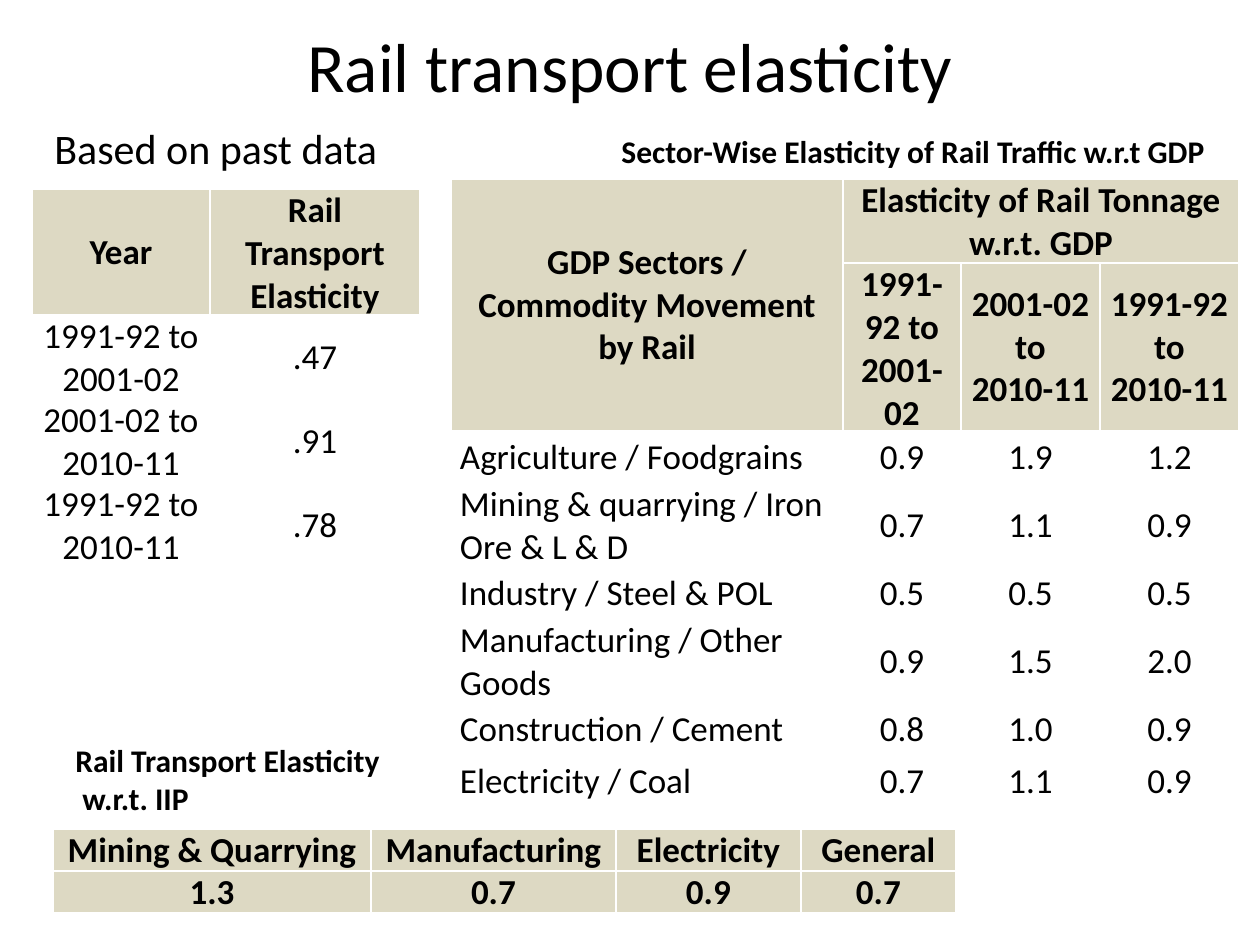
from lxml.etree import SubElement
from pptx import Presentation
from pptx.dml.color import RGBColor
from pptx.enum.text import MSO_ANCHOR, MSO_AUTO_SIZE, PP_ALIGN
from pptx.oxml.ns import qn
from pptx.util import Emu, Pt

COLORS = {"text": "000000", "header": "DDD9C3", "border": "FFFFFF"}
FONT = "Calibri"

PERIODS = ["1991-92 to\n2001-02", "2001-02 to\n2010-11", "1991-92 to\n2010-11"]

PAST_DATA = [
    ["Year", "Rail Transport Elasticity"],
    ["1991-92 to 2001-02", ".47"],
    ["2001-02 to 2010-11", ".91"],
    ["1991-92 to 2010-11", ".78"],
]
SECTORS = [
    ["GDP Sectors / Commodity Movement by Rail",
     "Elasticity of Rail Tonnage w.r.t. GDP", "", ""],
    ["", *PERIODS],
    ["Agriculture / Foodgrains", "0.9", "1.9", "1.2"],
    ["Mining & quarrying / Iron Ore & L & D", "0.7", "1.1", "0.9"],
    ["Industry / Steel & POL", "0.5", "0.5", "0.5"],
    ["Manufacturing / Other Goods", "0.9", "1.5", "2.0"],
    ["Construction / Cement", "0.8", "1.0", "0.9"],
    ["Electricity / Coal", "0.7", "1.1", "0.9"],
]
INDUSTRY = [
    ["Mining & Quarrying", "Manufacturing", "Electricity", "General"],
    ["1.3", "0.7", "0.9", "0.7"],
]


def px(n):
    return Emu(round(n * 914400 / 126))


def rgb(name):
    return RGBColor.from_string(COLORS[name])


def write(tf, text, size, bold=False, align=PP_ALIGN.LEFT):
    """One paragraph per line of text."""
    for i, line in enumerate(text.split("\n")):
        p = tf.paragraphs[0] if i == 0 else tf.add_paragraph()
        p.alignment = align
        r = p.add_run()
        r.text = line
        r.font.name = FONT
        r.font.size = Pt(size)
        r.font.bold = bold
        r.font.color.rgb = rgb("text")


def add_title(s, text, box):
    sp = s.shapes.title
    sp.left, sp.top, sp.width, sp.height = map(px, box)
    tf = sp.text_frame
    tf.auto_size = MSO_AUTO_SIZE.NONE
    tf.vertical_anchor = MSO_ANCHOR.MIDDLE
    write(tf, text, 39.6, align=PP_ALIGN.CENTER)


def add_label(s, text, box, size, bold=False, wrap=False):
    tf = s.shapes.add_textbox(*map(px, box)).text_frame
    tf.word_wrap = wrap
    tf.auto_size = MSO_AUTO_SIZE.SHAPE_TO_FIT_TEXT
    write(tf, text, size, bold)


def add_borders(cell):
    tcPr = cell._tc.get_or_add_tcPr()
    for side in ("lnL", "lnR", "lnT", "lnB"):
        ln = SubElement(tcPr, qn(f"a:{side}"), w=str(Pt(1)))
        fill = SubElement(ln, qn("a:solidFill"))
        SubElement(fill, qn("a:srgbClr"), val=COLORS["border"])


def format_cell(cell, text, header, align):
    cell.margin_left = cell.margin_right = px(9)
    cell.margin_top = cell.margin_bottom = 0
    cell.vertical_anchor = MSO_ANCHOR.MIDDLE
    add_borders(cell)
    if header:
        cell.fill.solid()
        cell.fill.fore_color.rgb = rgb("header")
    else:
        cell.fill.background()
    if not cell.is_spanned:
        write(cell.text_frame, text, 20, header, align)


def add_grid(s, data, box, cols, rows, headers, merges=(), left_labels=False):
    frame = s.shapes.add_table(len(data), len(cols), *map(px, box))
    table = frame.table
    table.first_row = table.horz_banding = False
    for col, width in zip(table.columns, cols):
        col.width = px(width)
    for row, height in zip(table.rows, rows):
        row.height = px(height)
    frame.height = px(box[3])
    for first, last in merges:
        table.cell(*first).merge(table.cell(*last))
    for i, values in enumerate(data):
        for j, text in enumerate(values):
            header = i < headers
            label = left_labels and j == 0 and not header
            align = PP_ALIGN.LEFT if label else PP_ALIGN.CENTER
            format_cell(table.cell(i, j), text, header, align)


def main():
    prs = Presentation()
    prs.slide_width, prs.slide_height = px(1260), px(945)
    s = prs.slides.add_slide(prs.slide_layouts[5])
    add_title(s, "Rail transport elasticity", (63, 21, 1134, 88))

    # Elasticity by period
    add_label(s, "Based on past data", (42, 116, 352, 63), 24, wrap=True)
    add_grid(s, PAST_DATA, (32, 189, 388, 378), [178, 210], [68] * 4, headers=1)

    # Elasticity by sector
    add_grid(s, SECTORS, (451, 179, 788, 626), [392, 118, 139, 139],
             [81, 161, 52, 81, 52, 81, 52, 52], headers=2,
             merges=[((0, 0), (1, 0)), ((0, 1), (0, 3))], left_labels=True)
    add_label(s, "Sector-Wise Elasticity of Rail Traffic w.r.t GDP",
              (609, 126, 624, 50), 18, bold=True)

    # Elasticity by industrial production
    add_grid(s, INDUSTRY, (53, 829, 903, 84), [318, 245, 185, 155],
             [24] * 2, headers=2)
    add_label(s, "Rail Transport Elasticity\n w.r.t. IIP",
              (63, 735, 333, 89), 18, bold=True)

    prs.save("out.pptx")


if __name__ == "__main__":
    main()
